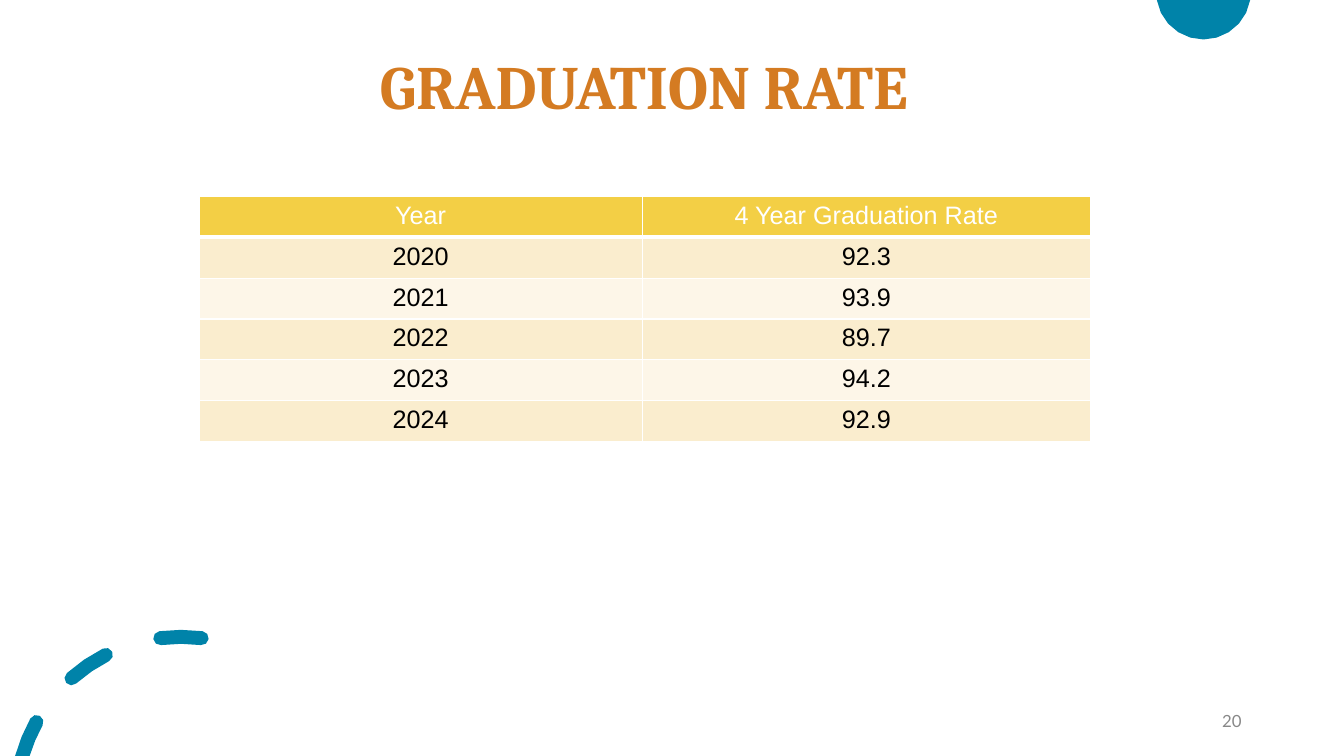
"""Build the graduation rate slide."""
from dataclasses import dataclass
from math import asin, cos, degrees, radians, sin

from lxml import etree
from pptx import Presentation
from pptx.dml.color import RGBColor
from pptx.enum.text import MSO_ANCHOR, PP_ALIGN
from pptx.oxml.ns import qn
from pptx.util import Pt

CENTER, RIGHT = PP_ALIGN.CENTER, PP_ALIGN.RIGHT
MIDDLE = MSO_ANCHOR.MIDDLE
WIDTH, HEIGHT = 960, 540
UNITS = 100


@dataclass(frozen=True)
class Theme:
    teal: str = "0083A9"
    orange: str = "D47B22"
    gray: str = "888888"
    white: str = "FFFFFF"
    black: str = "000000"
    header: str = "F3CF45"
    bands: tuple = ("FAEDCE", "FDF6E8")
    title_font: str = "Cambria"
    table_font: str = "Arial"
    number_font: str = "Lato"
    title_size: int = 44
    table_size: int = 18
    number_size: int = 12


THEME = Theme()
ROWS = [
    ("Year", "4 Year Graduation Rate"),
    ("2020", "92.3"),
    ("2021", "93.9"),
    ("2022", "89.7"),
    ("2023", "94.2"),
    ("2024", "92.9"),
]


def write(tf, text, *, font, size, color, bold=False, align=CENTER, spacing=None):
    p = tf.paragraphs[0]
    p.alignment = align
    if spacing:
        p.line_spacing = spacing
    r = p.add_run()
    r.text = text
    r.font.name, r.font.size, r.font.bold = font, Pt(size), bold
    r.font.color.rgb = RGBColor.from_string(color)


def add_text(s, text, left, top, width, height, **style):
    sp = s.shapes.add_textbox(Pt(left), Pt(top), Pt(width), Pt(height))
    tf = sp.text_frame
    tf.word_wrap = True
    tf.vertical_anchor = MIDDLE
    write(tf, text, **style)


def arc(cx, cy, radius, start, end, steps):
    angles = [radians(start + (end - start) * i / steps) for i in range(steps + 1)]
    return [(cx + radius * cos(a), cy - radius * sin(a)) for a in angles]


def cap(cx, cy, radius, half, angle, turn):
    center = arc(cx, cy, radius, angle, angle, 1)[0]
    return arc(*center, half, angle + turn, angle + turn + 180, 4)[1:-1]


def dash(cx, cy, radius, half, start, end=None):
    outer, inner = radius + half, radius - half
    if end is None:
        ends = [180 - degrees(asin((cy - HEIGHT) / r)) for r in (outer, inner)]
        end_cap = []
    else:
        ends = [end, end]
        end_cap = cap(cx, cy, radius, half, end, 0)
    return (arc(cx, cy, outer, start, ends[0], 2) + end_cap
            + arc(cx, cy, inner, ends[1], start, 2)
            + cap(cx, cy, radius, half, start, 180))


def add_outline(s, contours, color):
    scaled = [[(x * UNITS, y * UNITS) for x, y in c] for c in contours]
    fb = s.shapes.build_freeform(*scaled[0][0], scale=Pt(1) / UNITS)
    fb.add_line_segments(scaled[0][1:], close=True)
    for points in scaled[1:]:
        fb.move_to(*points[0])
        fb.add_line_segments(points[1:], close=True)
    sp = fb.convert_to_shape()
    sp.shadow.inherit = False
    sp.fill.solid()
    sp.fill.fore_color.rgb = RGBColor.from_string(color)
    sp.line.fill.background()


def set_borders(cell, color, **widths):
    tcPr = cell._tc.get_or_add_tcPr()
    for side in "LRTB":
        ln = etree.SubElement(tcPr, qn(f"a:ln{side}"), w=str(Pt(widths.get(side, 1))))
        fill = etree.SubElement(ln, qn("a:solidFill"))
        etree.SubElement(fill, qn("a:srgbClr"), val=color)


def add_rate_table(s, rows, left, top, col_widths, row_height):
    table = s.shapes.add_table(len(rows), len(col_widths), Pt(left), Pt(top),
                               Pt(sum(col_widths)), Pt(row_height * len(rows))).table
    for col, width in zip(table.columns, col_widths):
        col.width = Pt(width)
    for i, values in enumerate(rows):
        table.rows[i].height = Pt(row_height)
        fill = THEME.bands[(i - 1) % 2] if i else THEME.header
        for j, value in enumerate(values):
            cell = table.cell(i, j)
            set_borders(cell, THEME.white, B=1 if i else 3, T=3 if i == 1 else 1)
            cell.fill.solid()
            cell.fill.fore_color.rgb = RGBColor.from_string(fill)
            write(cell.text_frame, value, font=THEME.table_font, size=THEME.table_size,
                  color=THEME.black if i else THEME.white)


def main():
    prs = Presentation()
    prs.slide_width, prs.slide_height = Pt(WIDTH), Pt(HEIGHT)
    s = prs.slides.add_slide(prs.slide_layouts[6])
    add_outline(s, [arc(859.7, -5.6, 33.8, 189.54, 350.46, 10)], THEME.teal)
    dash_angles = [(151,), (117, 131.5), (82.8, 97.2)]
    add_outline(s, [dash(129.3, 572.9, 118, 5, *a) for a in dash_angles], THEME.teal)
    add_text(s, "20", 678, 500.4, 216, 28.8, font=THEME.number_font,
             size=THEME.number_size, color=THEME.gray, align=RIGHT)
    add_text(s, "GRADUATION RATE", 26.6, 11.5, 867, 104.4, font=THEME.title_font,
             size=THEME.title_size, color=THEME.orange, bold=True, spacing=0.9)
    add_rate_table(s, ROWS, 142.2, 140.3, (316.6, 320.1), 29.2)
    prs.save("out.pptx")


if __name__ == "__main__":
    main()
